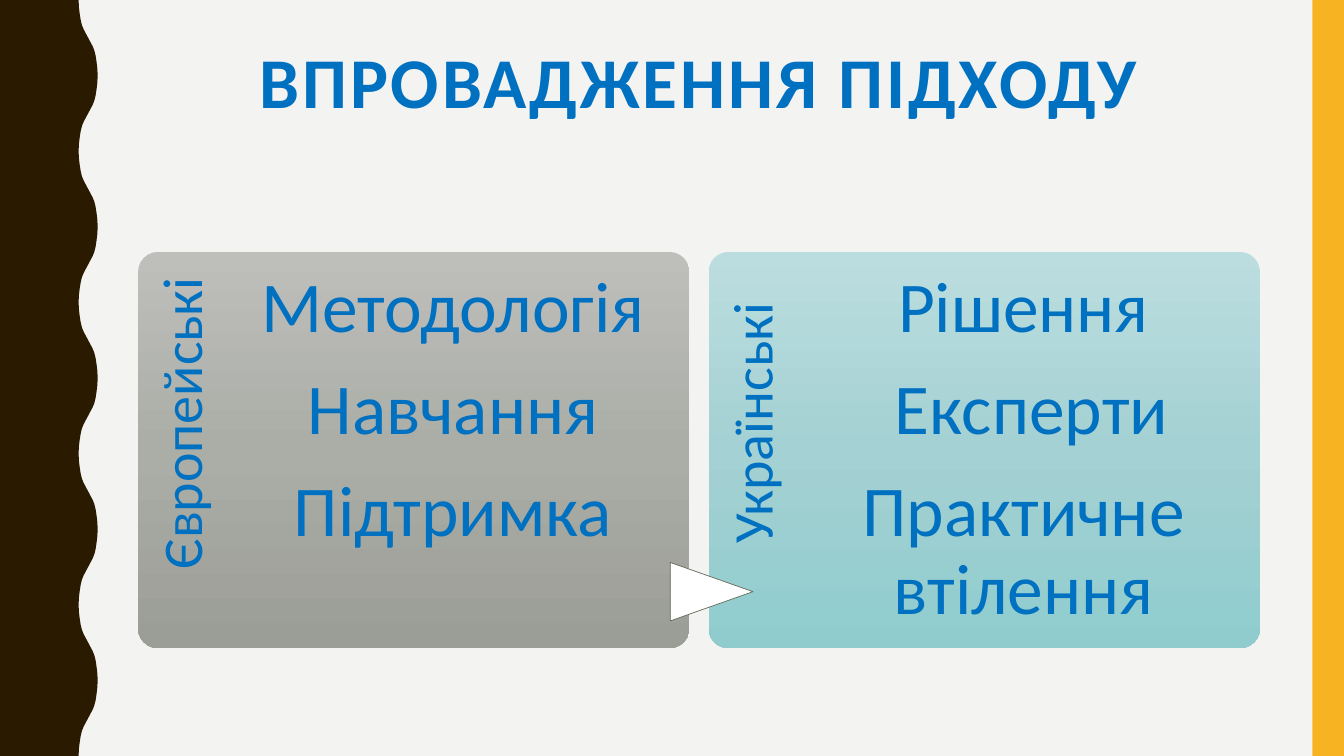
import copy
from dataclasses import dataclass

import pptx
import pptx.dml.color
import pptx.enum.shapes
import pptx.enum.text
import pptx.oxml.ns
import pptx.util

Pt = pptx.util.Pt
Kind = pptx.enum.shapes.MSO_SHAPE


@dataclass(frozen=True)
class Theme:
    font: str = "Calibri"
    text: str = "0070C0"
    back: str = "F3F3F2"
    wave: str = "2A1A00"
    stripe: str = "F8B323"
    arrow: str = "FFFFFF"
    edge: str = "656A59"
    large: float = 51
    small: float = 40


@dataclass(frozen=True)
class Box:
    left: float
    top: float
    width: float
    height: float

    def place(self) -> tuple:
        return Pt(self.left), Pt(self.top), Pt(self.width), Pt(self.height)


@dataclass(frozen=True)
class Card:
    label: str
    items: tuple[str, ...]
    shades: tuple[str, str, str]


THEME = Theme()
WIDTH, HEIGHT = 960, 540
LEFT, TOP, STEP = 98.64, 180, 407.52
CARDS = (
    Card("Європейські", ("Методологія", "Навчання", "Підтримка"),
         ("BEBFBB", "ABADA7", "9B9E96")),
    Card("Українські", ("Рішення", " Експерти", "Практичне втілення"),
         ("BCDDDF", "A4D1D3", "90CCCE")),
)


def paint(fill, tone: str) -> None:
    fill.solid()
    fill.fore_color.rgb = pptx.dml.color.RGBColor.from_string(tone)


def draw_shape(slide, kind, box: Box):
    shape = slide.shapes.add_shape(kind, *box.place())
    shape.shadow.inherit = False
    shape.line.fill.background()
    return shape


def draw_text(slide, box: Box, lines: tuple[str, ...], size: float,
              pads: tuple[float, ...], after: float = 0):
    shape = slide.shapes.add_textbox(*box.place())
    frame = shape.text_frame
    frame.word_wrap = True
    frame.vertical_anchor = pptx.enum.text.MSO_ANCHOR.TOP
    (frame.margin_left, frame.margin_top,
     frame.margin_right, frame.margin_bottom) = map(Pt, pads)
    frame.text = "\n".join(lines)
    for para in frame.paragraphs:
        para.alignment = pptx.enum.text.PP_ALIGN.CENTER
        para.line_spacing = 0.9
        para.space_after = Pt(after * size)
        for run in para.runs:
            run.font.name = THEME.font
            run.font.size = Pt(size)
            run.font.color.rgb = pptx.dml.color.RGBColor.from_string(THEME.text)
    return shape


def draw_wave(slide) -> None:
    mid, length = 63, 108
    rise = [(-6.8, 0), (-6.6, 5), (-6, 10), (-5.3, 14.4),
            (-4.4, 18), (-3.2, 21), (-1.6, 24), (0, 27)]
    half = rise + [(-x, length / 2 - y) for x, y in rise[-2::-1]]
    whole = half + [(x, length - y) for x, y in half[-2::-1]]
    curve = [(Pt(mid + x), Pt(start + y))
             for start in range(0, HEIGHT, length) for x, y in whole]
    form = slide.shapes.build_freeform(0, 0)
    form.add_line_segments(curve + [(0, Pt(HEIGHT))], close=True)
    shape = form.convert_to_shape()
    shape.shadow.inherit = False
    shape.line.fill.background()
    paint(shape.fill, THEME.wave)


def shade(shape, tones: tuple[str, str, str]) -> None:
    shape.fill.gradient()
    shape.fill.gradient_angle = 270
    stops = shape._element.spPr.find(".//" + pptx.oxml.ns.qn("a:gsLst"))
    stops.insert(1, copy.deepcopy(stops[0]))
    for spot, (stop, tone) in enumerate(zip(shape.fill.gradient_stops, tones)):
        stop.position = spot / 2
        stop.color.rgb = pptx.dml.color.RGBColor.from_string(tone)


def draw_card(slide, card: Card, left: float) -> None:
    panel = draw_shape(slide, Kind.ROUNDED_RECTANGLE, Box(left, TOP, 393.84, 282.96))
    panel.adjustments[0] = 0.05
    shade(panel, card.shades)
    label = draw_text(slide, Box(left - 76.32, 256.32, 231.84, 78.48),
                      (card.label,), THEME.small, (0, 10.8, 13.68, 0), 0.35)
    label.rotation = 270
    draw_text(slide, Box(left + 78.48, TOP, 293.04, 282.96),
              card.items, THEME.large, (0, 13.68, 0, 0), 0.35)


def main() -> None:
    deck = pptx.Presentation()
    deck.slide_width, deck.slide_height = Pt(WIDTH), Pt(HEIGHT)
    slide = deck.slides.add_slide(deck.slide_layouts[6])
    paint(slide.background.fill, THEME.back)

    draw_wave(slide)
    stripe = draw_shape(slide, Kind.RECTANGLE, Box(937.44, 0, 22.56, HEIGHT))
    paint(stripe.fill, THEME.stripe)

    title = draw_text(slide, Box(LEFT, 30.24, 801.36, 117.36),
                      ("ВПРОВАДЖЕННЯ ПІДХОДУ",), THEME.large, (7.2, 3.6, 7.2, 3.6))
    font = title.text_frame.paragraphs[0].runs[0].font
    font.bold = True
    font._element.set("spc", "200")

    for spot, card in enumerate(CARDS):
        draw_card(slide, card, LEFT + spot * STEP)

    arrow = draw_shape(slide, Kind.FLOWCHART_EXTRACT, Box(487.44, 393.12, 41.76, 59.04))
    arrow.rotation = 90
    paint(arrow.fill, THEME.arrow)
    paint(arrow.line.fill, THEME.edge)
    arrow.line.width = Pt(0.5)

    deck.save("out.pptx")


if __name__ == "__main__":
    main()
